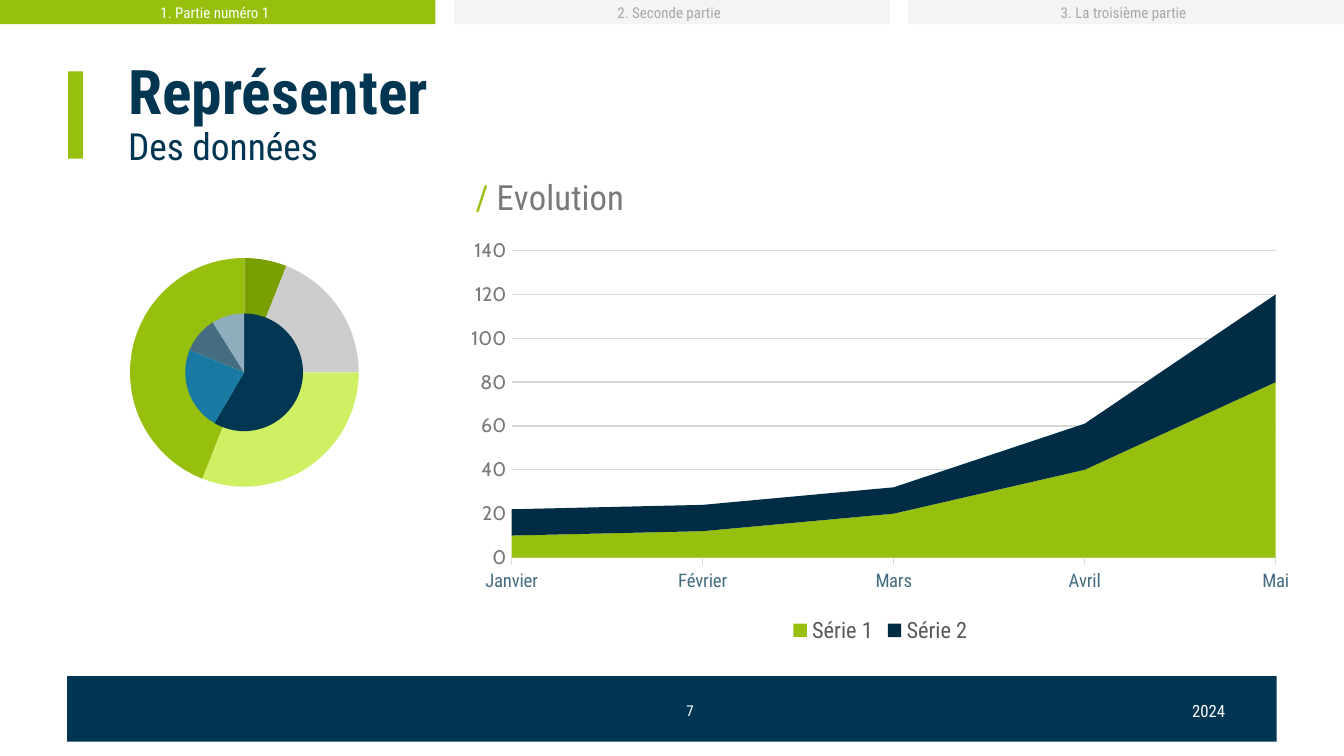
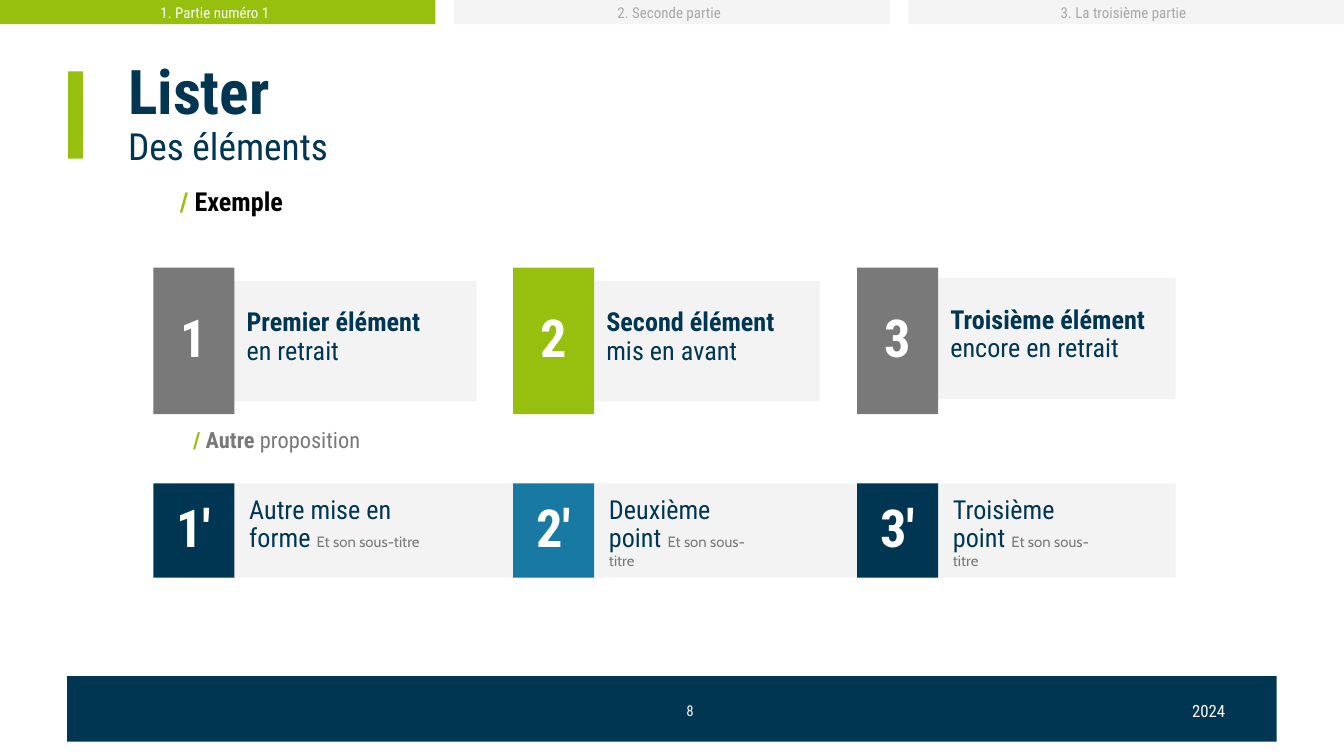
from lxml.etree import SubElement
from pptx import Presentation
from pptx.chart.data import CategoryChartData
from pptx.dml.color import RGBColor
from pptx.enum.chart import XL_CHART_TYPE, XL_LEGEND_POSITION, XL_TICK_LABEL_POSITION, XL_TICK_MARK
from pptx.enum.shapes import MSO_SHAPE
from pptx.enum.text import MSO_ANCHOR, MSO_AUTO_SIZE, PP_ALIGN
from pptx.oxml.ns import qn
from pptx.util import Cm, Pt

HEADING_FONT = "Roboto Condensed"
BODY_FONT = "Cabin"
NAVY, GREEN, BLUE, GREY = "003652", "97C00E", "187AA3", "797979"
WHITE, BLACK, PANEL, TAB, TAB_TEXT = "FFFFFF", "000000", "F3F3F3", "F4F4F4", "A7A7A7"
GRID, SLATE, LEGEND_TEXT = "D9D9D9", "446D82", "595959"

SLIDE_WIDTH, SLIDE_HEIGHT = 25.4, 14.29
TAB_WIDTH, TAB_HEIGHT = 8.23, 0.46
TABS = ["1. Partie numéro 1", "2. Seconde partie", "3. La troisième partie"]
INSETS = (0.25, 0.25, 0.25, 0.25)
CARD_INSETS = (0.2, 0, 0.25, 0.2)
BADGE_WIDTH = 1.53
TEXT_OFFSET = 1.56
COLUMNS = [2.9, 9.7, 16.2]


def rgb(color):
    return RGBColor.from_string(color)


def lengths(box):
    return [Cm(value) for value in box]


def style(font, size=None, color=None, bold=None, name=None):
    """Set only the font properties that are given."""
    if size:
        font.size = Pt(size)
    if color:
        font.color.rgb = rgb(color)
    if bold is not None:
        font.bold = bold
    if name:
        font.name = name


def write(paragraph, runs, size, color=None, bold=None, name=HEADING_FONT,
          align=None, spacing=None):
    """Fill a paragraph; runs is a text or a list of (text, own font settings)."""
    if align is not None:
        paragraph.alignment = align
    if spacing:
        paragraph.line_spacing = spacing
    style(paragraph.font, size, color, bold, name)
    for text, own in [(runs, {})] if isinstance(runs, str) else runs:
        run = paragraph.add_run()
        run.text = text
        style(run.font, **own)


def set_frame(shape, insets, anchor):
    frame = shape.text_frame
    frame.word_wrap = True
    frame.auto_size = MSO_AUTO_SIZE.NONE
    frame.vertical_anchor = anchor
    frame.margin_left, frame.margin_top, frame.margin_right, frame.margin_bottom = lengths(insets)
    return frame


def add_rectangle(slide, box, color):
    shape = slide.shapes.add_shape(MSO_SHAPE.RECTANGLE, *lengths(box))
    shape.shadow.inherit = False
    shape.fill.solid()
    shape.fill.fore_color.rgb = rgb(color)
    shape.line.fill.background()
    return shape


def add_text(slide, box, runs, size, insets=INSETS, anchor=MSO_ANCHOR.TOP, **format):
    shape = slide.shapes.add_textbox(*lengths(box))
    write(set_frame(shape, insets, anchor).paragraphs[0], runs, size, **format)


def add_label(slide, box, fill, text, size, color, insets=INSETS, **format):
    """Draw a filled rectangle with centred text."""
    frame = set_frame(add_rectangle(slide, box, fill), insets, MSO_ANCHOR.MIDDLE)
    write(frame.paragraphs[0], text, size, color, align=PP_ALIGN.CENTER, **format)


def add_tabs(slide, active):
    step = (SLIDE_WIDTH - TAB_WIDTH) / (len(TABS) - 1)
    for index, text in enumerate(TABS):
        fill, color = (GREEN, WHITE) if index == active else (TAB, TAB_TEXT)
        add_label(slide, (index * step, 0, TAB_WIDTH, TAB_HEIGHT), fill, text, 8, color,
                  insets=(0, 0.1, 0.1, 0.1))


def add_footer(slide, box, number):
    left, top, width, height = box
    insets = (0.25, 0.13, 0.25, 0.13)
    add_rectangle(slide, box, NAVY)
    add_text(slide, (left + 10.85, top + 0.28, 1.85, 0.76), str(number), 8, insets,
             MSO_ANCHOR.MIDDLE, color=WHITE, align=PP_ALIGN.CENTER)
    add_text(slide, (left + 21.01, top + 0.33, 3.1, 0.76), "2024", 9, insets, color=WHITE)


def add_heading(slide, box, heading, subheading):
    left, top, width, height = box
    add_rectangle(slide, (left, top, 0.28, height), GREEN)
    title = slide.shapes.title
    title.left, title.top, title.width, title.height = lengths(
        (left + 0.88, top, width - 0.88, height))
    frame = set_frame(title, INSETS, MSO_ANCHOR.MIDDLE)
    write(frame.paragraphs[0], heading, 33, NAVY, True, align=PP_ALIGN.LEFT, spacing=0.9)
    write(frame.add_paragraph(), subheading, 20, NAVY, False, align=PP_ALIGN.LEFT, spacing=0.9)


def add_content_slide(presentation, number, heading, subheading):
    slide = presentation.slides.add_slide(presentation.slide_layouts[5])
    add_footer(slide, (1.27, 12.78, 22.86, 1.24), number)
    add_heading(slide, (1.29, 1.35, 7.72, 1.65), heading, subheading)
    add_tabs(slide, active=0)
    return slide


def set_layout(element, **values):
    """Place a chart part by fractions of the chart's size."""
    layout = element.find(qn("c:layout"))
    if layout is None:
        layout = element.makeelement(qn("c:layout"))
        element.insert(0, layout)
    manual = SubElement(layout, qn("c:manualLayout"))
    if "w" in values:
        values = {"layoutTarget": "inner", "xMode": "edge", "yMode": "edge", **values}
    else:
        values = {"xMode": "edge", "yMode": "edge", **values}
    for tag, value in values.items():
        SubElement(manual, qn(f"c:{tag}")).set("val", str(value))


def add_chart(slide, box, kind, categories, series, plot):
    data = CategoryChartData()
    data.categories = categories
    for name, values in series:
        data.add_series(name, values)
    chart = slide.shapes.add_chart(kind, *lengths(box), data).chart
    style(chart.font, 10, BLACK, name=BODY_FONT)
    chart.has_title = chart.has_legend = False
    set_layout(chart.plots[0]._element.getparent(), **dict(zip("xywh", plot)))
    return chart


def fill_part(part, color):
    part.format.fill.solid()
    part.format.fill.fore_color.rgb = rgb(color)
    part.format.line.fill.background()


def add_share_chart(slide, box, kind, values, colors):
    chart = add_chart(slide, box, kind, ["1", "2", "3", "4"], [("Series 1", values)],
                      (0.282, 0.342, 0.565, 0.658))
    chart.plots[0].vary_by_categories = True
    for index, color in enumerate(colors):
        fill_part(chart.plots[0].series[0].points[index], color)


def add_evolution_chart(slide, box):
    chart = add_chart(slide, box, XL_CHART_TYPE.AREA_STACKED,
                      ["Janvier", "Février", "Mars", "Avril", "Mai"],
                      [("Série 1", (10, 12, 20, 40, 80)), ("Série 2", (12, 12, 12, 21, 40))],
                      (0.067, 0.19, 0.897, 0.624))
    chart.plots[0].vary_by_categories = False
    for series, color in zip(chart.plots[0].series, (GREEN, "002D45")):
        fill_part(series, color)

    chart.has_title = True
    write(chart.chart_title.text_frame.paragraphs[0],
          [("/ ", {"color": GREEN}), ("Evolution", {"color": GREY})], 18.6, bold=False)
    set_layout(chart.chart_title._element, x=0.02, y=0.03)

    chart.has_legend = True
    chart.legend.position = XL_LEGEND_POSITION.BOTTOM
    chart.legend.include_in_layout = False
    style(chart.legend.font, 12, LEGEND_TEXT, name=HEADING_FONT)

    months = chart.category_axis
    months.tick_label_position = XL_TICK_LABEL_POSITION.LOW
    months.major_tick_mark = XL_TICK_MARK.OUTSIDE
    months.has_major_gridlines = False
    style(months.tick_labels.font, 10, SLATE, name=HEADING_FONT)

    amounts = chart.value_axis
    amounts.minimum_scale, amounts.maximum_scale, amounts.major_unit = 0, 140, 20
    amounts.major_tick_mark = XL_TICK_MARK.NONE
    amounts.has_major_gridlines = True
    amounts.format.line.fill.background()
    style(amounts.tick_labels.font, 10.5, GREY, name=BODY_FONT)
    amounts._element.find(qn("c:crossBetween")).set("val", "midCat")
    for line in (months.format.line, amounts.major_gridlines.format.line):
        line.color.rgb = rgb(GRID)
        line.width = Pt(0.75)


def add_badge(slide, box, color, text):
    add_label(slide, box, color, text, 28, WHITE, bold=True, spacing=0.9)


def add_card(slide, box, panel, text_width, color, number, name, detail):
    """Draw a numbered card; panel is its left, top and width inside the box."""
    left, top, height = box
    panel_left, panel_top, panel_width = panel
    add_rectangle(slide, (left + panel_left, top + panel_top, panel_width, 2.28), PANEL)
    add_text(slide, (left + TEXT_OFFSET, top + panel_top + 0.03, text_width, 2.28),
             [(name + " ", {"bold": True}), (detail, {"bold": False})], 14, CARD_INSETS,
             MSO_ANCHOR.MIDDLE, color=NAVY, spacing=0.9)
    add_badge(slide, (left, top, BADGE_WIDTH, height), color, number)


def add_strip(slide, box, points):
    left, top, width, height = box
    add_rectangle(slide, box, PANEL)
    for column, (number, color, name, text_width) in zip(COLUMNS, points):
        add_text(slide, (column + TEXT_OFFSET, top, text_width, 2.28),
                 [(name + " ", {"size": 14, "color": NAVY, "name": HEADING_FONT}),
                  ("Et son sous-titre", {"size": 8, "color": GREY, "name": BODY_FONT})],
                 14, spacing=0.9)
        add_badge(slide, (column, top, BADGE_WIDTH, height), color, number)


def build_data_slide(presentation):
    slide = add_content_slide(presentation, 7, "Représenter", "Des données")
    add_evolution_chart(slide, (8.59, 2.97, 16.1, 9.3))
    add_share_chart(slide, (0.3, 1.96, 7.65, 7.57), XL_CHART_TYPE.DOUGHNUT,
                    (6, 19, 31, 44), ("7A9F00", "CDCCCC", "D0F063", GREEN))
    add_share_chart(slide, (2.39, 4.45, 3.94, 3.86), XL_CHART_TYPE.PIE,
                    (59, 23, 10, 9), ("013752", BLUE, SLATE, "8FADBD"))


def build_list_slide(presentation):
    slide = add_content_slide(presentation, 8, "Lister", "Des éléments")
    cards = [
        ((0.5, 0.25, 5.61), 4.11, GREY, "1", "Premier élément", "en retrait"),
        ((0, 0.25, 5.79), 3.73, GREEN, "2", "Second élément", "mis en avant"),
        ((0, 0.2, 6.02), 4.45, GREY, "3", "Troisième élément", "encore en retrait"),
    ]
    for column, card in zip(COLUMNS, cards):
        add_card(slide, (column, 5.06, 2.77), *card)
    add_text(slide, (3.15, 3.33, 7.11, 2.28),
             [("/ ", {"color": GREEN}), ("Exemple", {"color": BLACK})], 14,
             bold=True, spacing=0.9)
    add_strip(slide, (3.4, 9.14, 18.82, 1.78), [
        ("1'", NAVY, "Autre mise en forme", 4.22),
        ("2'", BLUE, "Deuxième point", 3.45),
        ("3'", NAVY, "Troisième point", 3.5),
    ])
    add_text(slide, (3.4, 7.87, 4.85, 2.28),
             [("/ ", {"color": GREEN, "bold": True}), ("Autre ", {"color": GREY, "bold": True}),
              ("proposition", {"color": GREY, "bold": False})], 12, spacing=0.9)


def main():
    presentation = Presentation()
    presentation.slide_width, presentation.slide_height = lengths((SLIDE_WIDTH, SLIDE_HEIGHT))
    build_data_slide(presentation)
    build_list_slide(presentation)
    presentation.save("out.pptx")


if __name__ == "__main__":
    main()
